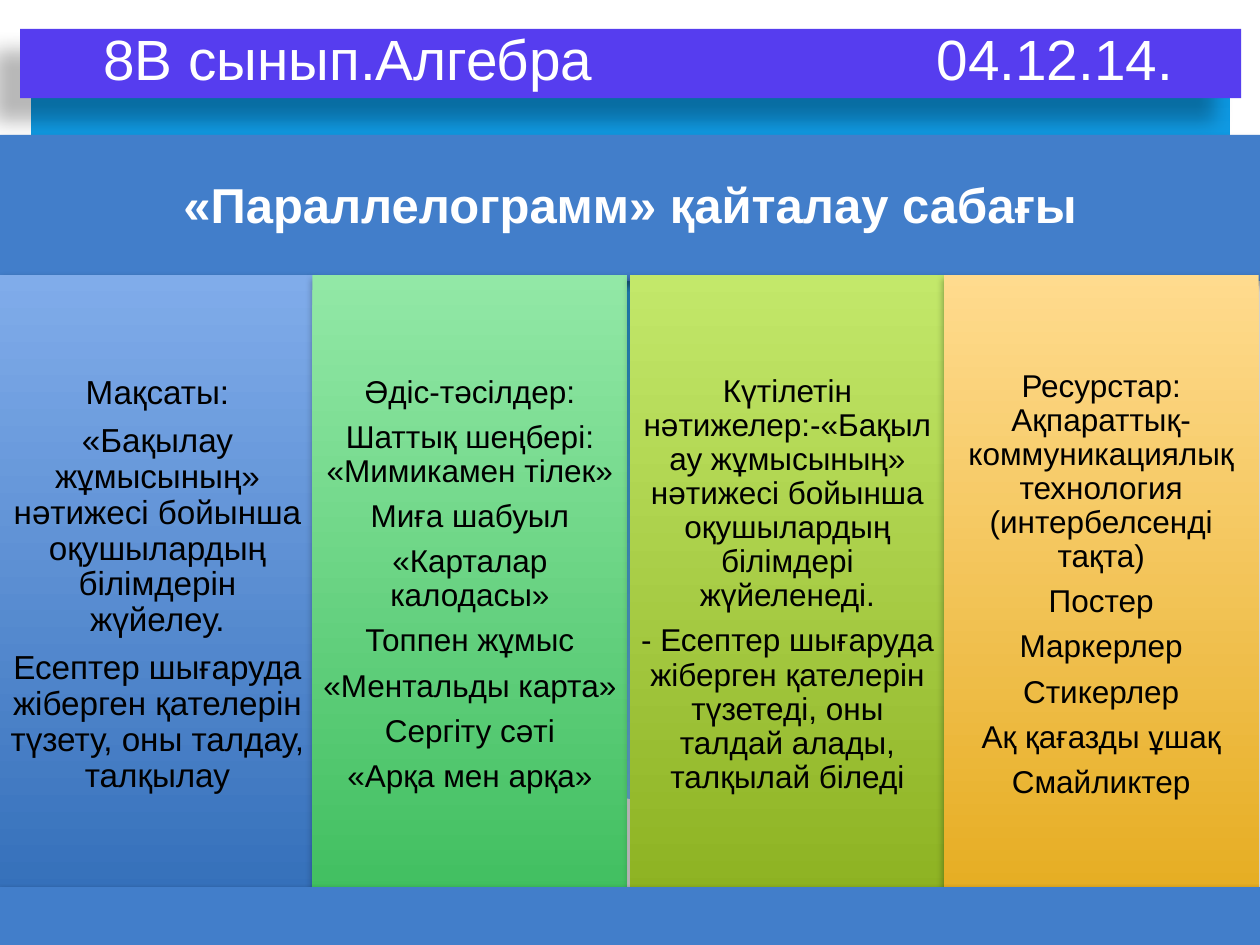
import pptx
import pptx.util
import pptx.dml.color
import pptx.enum.shapes
import pptx.enum.text
import pptx.oxml
import pptx.oxml.ns

In, Pt = pptx.util.Inches, pptx.util.Pt
RGB = pptx.dml.color.RGBColor.from_string
SHAPE = pptx.enum.shapes.MSO_SHAPE
ALIGN = pptx.enum.text.PP_ALIGN
ANCHOR = pptx.enum.text.MSO_ANCHOR

THEME = {
    "font": "Arial", "light": "FFFFFF", "dark": "000000",
    "header": "563DEF", "band": "427ECA", "panel": ("0293E0", "83D3FE"),
    "header_pt": 32.4, "title_pt": 28,
}
# Shadows: opacity %, blur pt, distance pt, angle
SOFT, DEEP = (38, 4, 2, 90), (28, 11.8, 19.7, 141)

# Grid: four equal columns between the top and bottom bands
W, H = 10, 7.5
COL_W = W / 4
BAND_Y, BODY_Y, BODY_H, FOOT_Y = 1.07, 2.18, 4.93, 7.04

prs = pptx.Presentation()
prs.slide_width, prs.slide_height = In(W), In(H)
s = prs.slides.add_slide(prs.slide_layouts[6])


def add_block(x, y, w, h, fill, shadow=None, kind=SHAPE.RECTANGLE):
    """Add a borderless shape; a pair of colours makes a vertical gradient."""
    sp = s.shapes.add_shape(kind, In(x), In(y), In(w), In(h))
    sp.shadow.inherit = False
    sp.line.fill.background()
    if isinstance(fill, tuple):
        sp.fill.gradient()
        sp.fill.gradient_angle = 270
        for stop, color in zip(sp.fill.gradient_stops, fill):
            stop.color.rgb = RGB(color)
    else:
        sp.fill.solid()
        sp.fill.fore_color.rgb = RGB(fill)
    if shadow:
        alpha, blur, dist, angle = shadow
        effects = sp._element.spPr.find(pptx.oxml.ns.qn("a:effectLst"))
        effects.append(pptx.oxml.parse_xml(
            f'<a:outerShdw {pptx.oxml.ns.nsdecls("a")} blurRad="{Pt(blur)}" '
            f'dist="{Pt(dist)}" dir="{angle * 60000}" rotWithShape="0">'
            f'<a:srgbClr val="{THEME["dark"]}"><a:alpha val="{alpha * 1000}"/>'
            '</a:srgbClr></a:outerShdw>'))
    return sp


def write(sp, lines, size, color, inset, bold=False):
    """Fill a shape with centred paragraphs."""
    tf = sp.text_frame
    tf.word_wrap = True
    tf.vertical_anchor = ANCHOR.MIDDLE
    tf.margin_left = tf.margin_right = tf.margin_top = tf.margin_bottom = In(inset)
    for i, line in enumerate(lines):
        p = tf.paragraphs[0] if i == 0 else tf.add_paragraph()
        p.text = line
        p.alignment = ALIGN.CENTER
        p.line_spacing = 0.9
        p.space_after = Pt(0.35 * size)
        p.font.name, p.font.size, p.font.bold = THEME["font"], Pt(size), bold
        p.font.color.rgb = RGB(color)
    return tf


# Background panel with a white wave along its foot
panel = add_block(0.25, 0.25, 9.51, 6.6, THEME["panel"], kind=SHAPE.ROUNDED_RECTANGLE)
panel.adjustments[0] = 0.01
wave = [(0.23, 6.15), (1.06, 5.91), (1.93, 5.86), (2.92, 5.92), (3.91, 6.09),
        (5.03, 6.35), (6.03, 6.56), (7.08, 6.72), (8.09, 6.79), (8.99, 6.71),
        (9.77, 6.48), (9.77, 7.31), (0.23, 7.31)]
fb = s.shapes.build_freeform(In(wave[0][0]), In(wave[0][1]))
fb.add_line_segments([(In(x), In(y)) for x, y in wave[1:]], close=True)
sp = fb.convert_to_shape()
sp.shadow.inherit = False
sp.line.fill.background()
sp.fill.solid()
sp.fill.fore_color.rgb = RGB(THEME["light"])

# Header: class on the left, date at a right tab
sp = add_block(0.16, 0.23, 9.69, 0.55, THEME["header"], DEEP)
tf = write(sp, ["8В сынып.Алгебра\t04.12.14."], THEME["header_pt"], THEME["light"], 0.05)
tf.vertical_anchor = ANCHOR.BOTTOM
tf.margin_left = In(0.66)
p = tf.paragraphs[0]
p.alignment, p.line_spacing, p.space_after = ALIGN.LEFT, 1.0, Pt(0)
p._p.get_or_add_pPr().insert_element_before(
    pptx.oxml.parse_xml(f'<a:tabLst {pptx.oxml.ns.nsdecls("a")}>'
                        f'<a:tab pos="{In(8.49)}" algn="r"/></a:tabLst>'),
    "a:defRPr", "a:extLst")

# Lesson title band
sp = add_block(0, BAND_Y, W, 1.16, THEME["band"], SOFT)
write(sp, ["«Параллелограмм» қайталау сабағы"], THEME["title_pt"], THEME["light"], 0.12, True)

# Columns: nudge from the grid, text size, gradient, paragraphs
columns = [
    (0, 19, ("80ACEA", "3570BA"), [
        "Мақсаты:",
        "«Бақылау жұмысының» нәтижесі бойынша оқушылардың білімдерін жүйелеу.",
        "Есептер шығаруда жіберген қателерін түзету, оны талдау, талқылау"]),
    (-0.02, 18, ("92E8A6", "41BF60"), [
        "Әдіс-тәсілдер:", "Шаттық шеңбері: «Мимикамен тілек»", "Миға шабуыл",
        "«Карталар калодасы»", "Топпен жұмыс", "«Ментальды карта»",
        "Сергіту сәті", "«Арқа мен арқа»"]),
    (0, 18, ("C3E86A", "8DB222"), [
        "Күтілетін нәтижелер:-«Бақылау жұмысының» нәтижесі бойынша "
        "оқушылардың білімдері жүйеленеді.",
        "- Есептер шығаруда жіберген қателерін түзетеді, оны талдай алады, "
        "талқылай біледі"]),
    (-0.01, 18, ("FFDB8E", "E6AD22"), [
        "Ресурстар: Ақпараттық-коммуникациялық технология (интербелсенді тақта)",
        "Постер", "Маркерлер", "Стикерлер", "Ақ қағазды ұшақ", "Смайликтер"]),
]
for i, (nudge, size, fill, lines) in enumerate(columns):
    sp = add_block(i * COL_W + nudge, BODY_Y, COL_W, BODY_H, fill, SOFT)
    write(sp, lines, size, THEME["dark"], 0.07)

# Bottom band
add_block(0, FOOT_Y, W, H - FOOT_Y, THEME["band"], SOFT)

prs.save("out.pptx")
